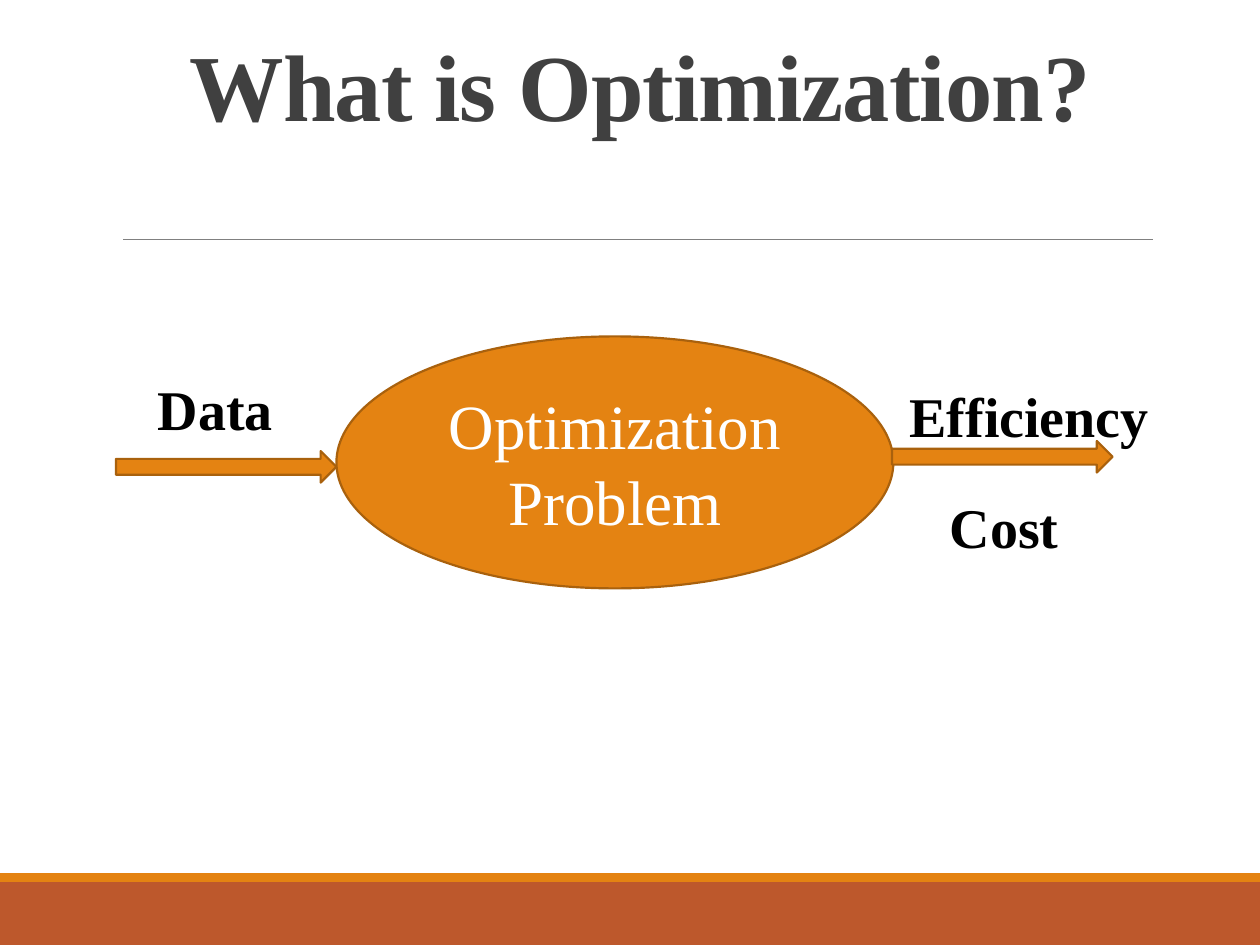
from dataclasses import dataclass
from typing import Optional

from pptx import Presentation
from pptx.dml.color import RGBColor
from pptx.enum.shapes import MSO_CONNECTOR, MSO_SHAPE
from pptx.enum.text import MSO_ANCHOR, PP_ALIGN
from pptx.oxml import parse_xml
from pptx.oxml.ns import nsdecls
from pptx.util import Inches, Pt

FONT = "Times New Roman"
ORANGE = "E48312"
DARK_ORANGE = "A9610D"
RUST = "BD582C"
GRAY = "808080"
TITLE_GRAY = "404040"
WHITE = "FFFFFF"
BLACK = "000000"


@dataclass(frozen=True)
class Block:
    kind: MSO_SHAPE
    left: float
    top: float
    width: float
    height: float
    fill: str
    outline: Optional[str] = None


@dataclass(frozen=True)
class Label:
    text: str
    left: float
    top: float
    width: float
    align: PP_ALIGN = PP_ALIGN.CENTER


def color(value: str) -> RGBColor:
    return RGBColor.from_string(value)


def write(shape, text: str, size: int, text_color: str, bold: bool,
          align: PP_ALIGN, anchor: MSO_ANCHOR):
    """Put one formatted paragraph in the shape and return its run."""
    frame = shape.text_frame
    frame.word_wrap = True
    frame.vertical_anchor = anchor
    paragraph = frame.paragraphs[0]
    paragraph.alignment = align
    run = paragraph.add_run()
    run.text = text
    for name, value in {"name": FONT, "size": Pt(size), "bold": bold}.items():
        setattr(run.font, name, value)
    run.font.color.rgb = color(text_color)
    return run


def add_block(slide, block: Block):
    shape = slide.shapes.add_shape(
        block.kind, Inches(block.left), Inches(block.top),
        Inches(block.width), Inches(block.height))
    shape.shadow.inherit = False
    shape.fill.solid()
    shape.fill.fore_color.rgb = color(block.fill)
    if block.outline:
        shape.line.color.rgb = color(block.outline)
        shape.line.width = Pt(1.25)
    else:
        shape.line.fill.background()
    return shape


def add_label(slide, label: Label) -> None:
    box = slide.shapes.add_textbox(
        Inches(label.left), Inches(label.top), Inches(label.width), Inches(0.64))
    write(box, label.text, 32, BLACK, True, label.align, MSO_ANCHOR.TOP)


def add_rule(slide) -> None:
    rule = slide.shapes.add_connector(
        MSO_CONNECTOR.STRAIGHT, Inches(0.98), Inches(1.9), Inches(9.15), Inches(1.9))
    rule.line.color.rgb = color(GRAY)
    rule.line.width = Pt(0.5)
    rule._element.spPr.append(parse_xml(f"<a:effectLst {nsdecls('a')}/>"))


def format_title(title) -> None:
    position = {"left": 0.33, "top": 0.25, "width": 9.5, "height": 0.92}
    for name, value in position.items():
        setattr(title, name, Inches(value))
    run = write(title, "What is Optimization?", 54, TITLE_GRAY, True,
                PP_ALIGN.CENTER, MSO_ANCHOR.BOTTOM)
    run.font._element.set("spc", "-50")
    title.text_frame.paragraphs[0].line_spacing = 0.85


FOOTER_BANDS = [
    Block(MSO_SHAPE.RECTANGLE, 0, 7, 10, 0.5, RUST),
    Block(MSO_SHAPE.RECTANGLE, 0, 6.93, 10, 0.07, ORANGE),
]
PROBLEM = Block(MSO_SHAPE.OVAL, 2.67, 2.67, 4.42, 2, ORANGE, DARK_ORANGE)
FLOW_ARROWS = [
    Block(MSO_SHAPE.RIGHT_ARROW, left, top, 1.75, 0.25, ORANGE, DARK_ORANGE)
    for left, top in [(0.92, 3.58), (7.08, 3.5)]
]
FLOW_LABELS = [
    Label("Efficiency", 7.12, 2.98, 2.24, PP_ALIGN.LEFT),
    Label("Data", 1, 2.92, 1.42),
    Label("Cost", 7.26, 3.86, 1.42),
]


def main() -> None:
    presentation = Presentation()
    presentation.slide_width = Inches(10)
    presentation.slide_height = Inches(7.5)
    slide = presentation.slides.add_slide(presentation.slide_layouts[5])

    format_title(slide.shapes.title)
    for band in FOOTER_BANDS:
        add_block(slide, band)
    add_rule(slide)
    problem = add_block(slide, PROBLEM)
    write(problem, "Optimization Problem", 36, WHITE, False,
          PP_ALIGN.CENTER, MSO_ANCHOR.MIDDLE)
    for arrow in FLOW_ARROWS:
        add_block(slide, arrow)
    for label in FLOW_LABELS:
        add_label(slide, label)

    presentation.save("out.pptx")


if __name__ == "__main__":
    main()
